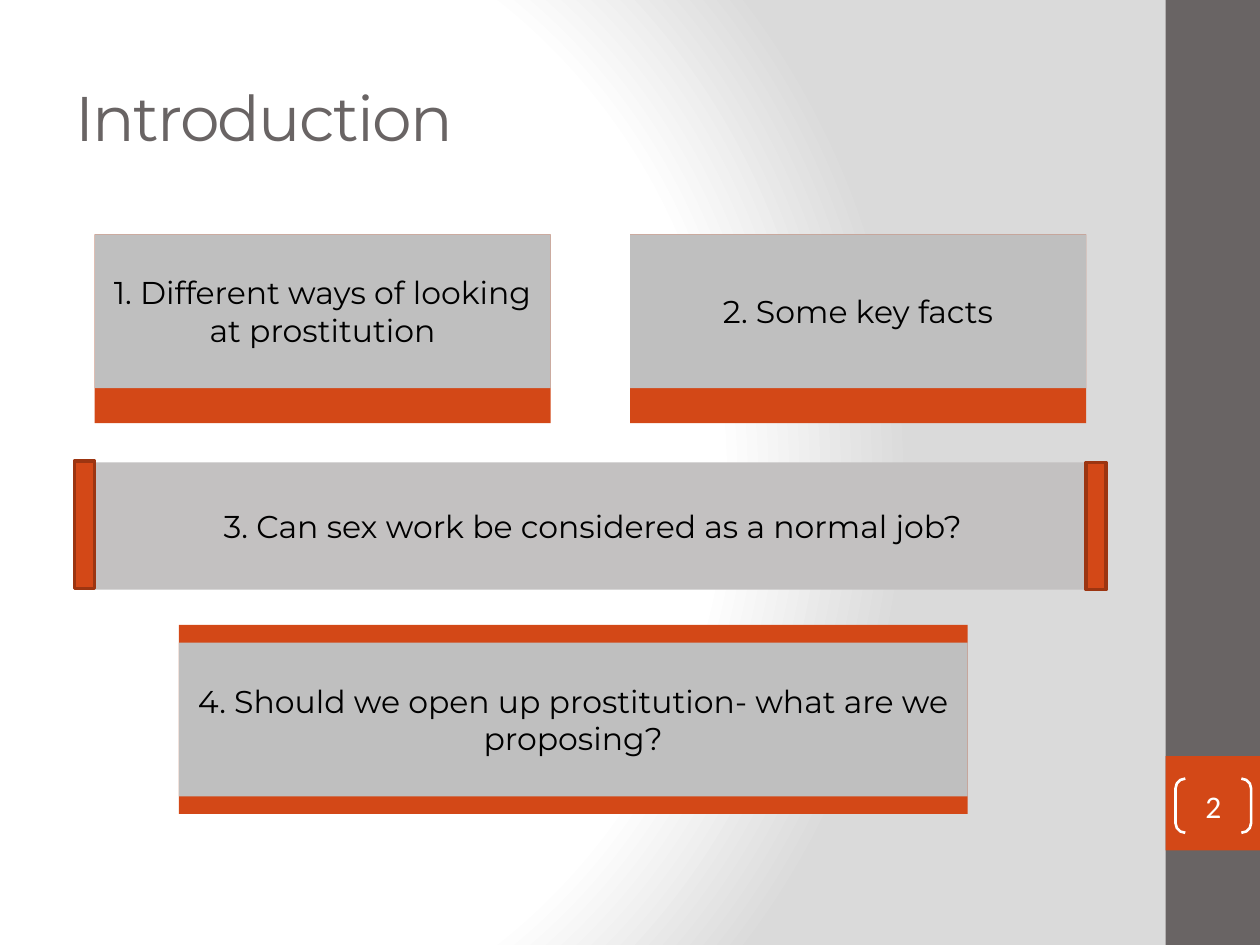
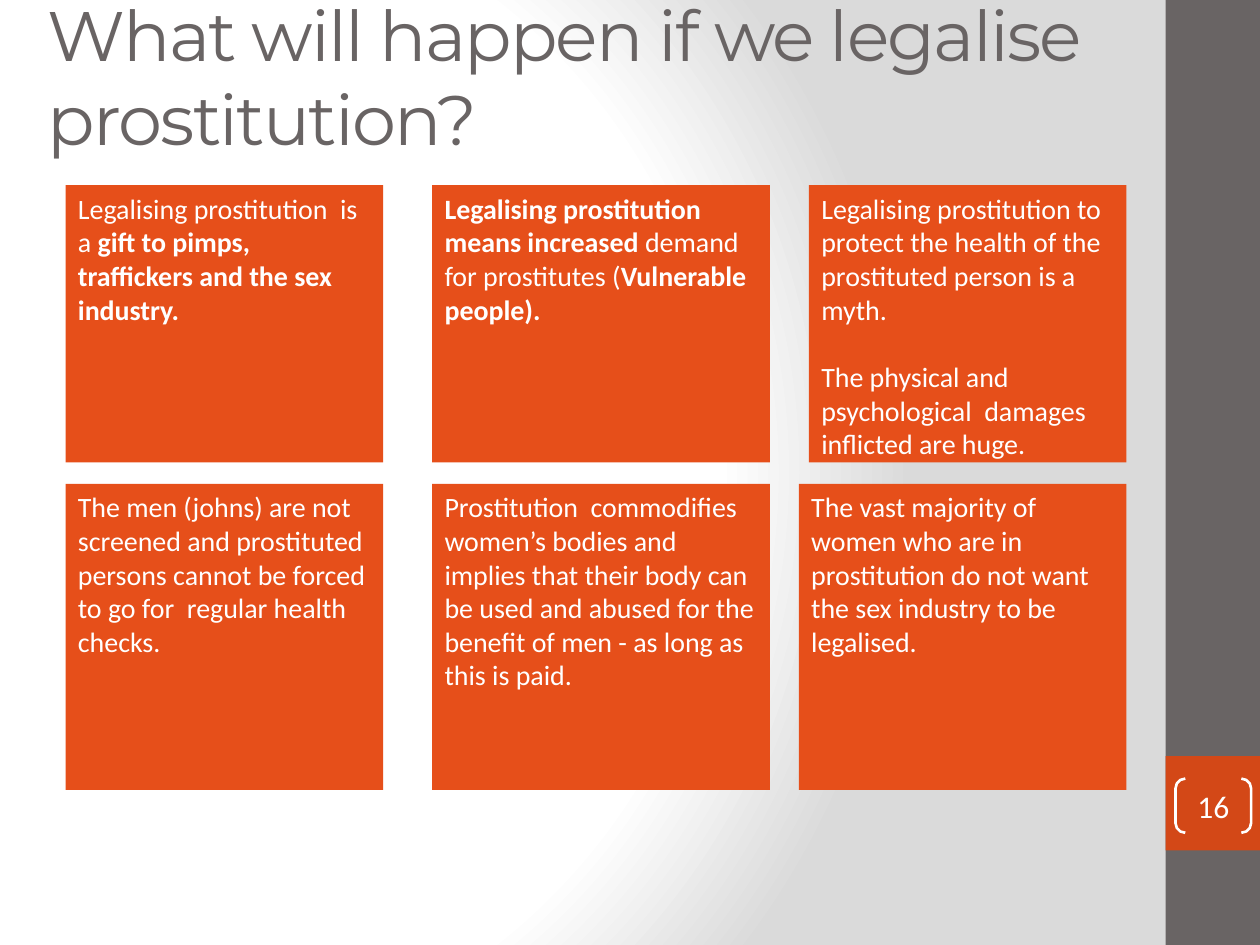
from lxml import etree
from pptx import Presentation
from pptx import util as u
from pptx.dml.color import RGBColor
from pptx.enum import shapes, text
from pptx.oxml import parse_xml
from pptx.oxml.ns import nsdecls, qn

WIDTH, HEIGHT = 10, 7.5
COLORS = {"white": "FFFFFF", "mist": "DADADA", "slate": "696464", "rust": "D34817",
          "rust_edge": "9C3511", "orange": "E64F1A", "plate": "BFBFBF",
          "bar": "C3C1C1", "black": "000000"}
HEADING_FONT, BODY_FONT = "Montserrat", "Calibri"
LEFT, MIDDLE_ALIGN = text.PP_ALIGN.LEFT, text.PP_ALIGN.CENTER
TOP, MIDDLE = text.MSO_ANCHOR.TOP, text.MSO_ANCHOR.MIDDLE

INTRODUCTION = {"title": "Introduction", "number": "2", "size": 36,
                "title_box": (0.5, 0.3, 8.33, 1.25)}
AGENDA_CARDS = [
    ("1. Different ways of looking at prostitution", 0.75, 1.86, 3.62, 0),
    ("2. Some key facts", 5, 1.86, 3.62, 0),
    ("4. Should we open up prostitution- what are we proposing?", 1.42, 4.96, 6.26, 0.14),
]
CARD_HEIGHT, PLATE_HEIGHT = 1.5, 1.22
AGENDA_BAR = ("3. Can sex work be considered as a normal job?", (0.75, 3.67, 7.91, 1.01))
BAR_ENDS = [(0.59, 3.66), (8.62, 3.67)]
BAR_END_SIZE = (0.16, 1.01)

EFFECTS = {"title": "What will happen if we legalise prostitution?", "number": "16",
           "size": 40, "title_box": (0.28, -0.11, 8.66, 1.42)}
EFFECT_COLUMNS = [(0.52, 2.52), (3.43, 2.68), (6.42, 2.52)]
EFFECT_ROWS = [(1.47, 2.2), (3.84, 2.43)]
LAST_CARD_OVERHANG = 0.08
EFFECT_CARDS = [
    [
        [[("Legalising prostitution  is a ", False),
          ("gift to pimps, traffickers and the sex industry.", True)]],
        [[("Legalising prostitution means increased", True),
          (" demand for prostitutes (", False), ("Vulnerable people).", True)]],
        [[("Legalising prostitution to protect the health of the prostituted person "
           "is a myth.", False)],
         [("The physical and psychological  damages inflicted are huge.", False)]],
    ],
    [
        [[("The men (johns) are not screened and prostituted persons cannot be forced "
           "to go for  regular health checks.", False)]],
        [[("Prostitution  commodifies women’s bodies and implies that their body can "
           "be used and abused for the benefit of men - as long as this is paid.", False)]],
        [[("The vast majority of women who are in prostitution do not want the sex "
           "industry to be legalised.", False)]],
    ],
]


def color(name):
    return RGBColor.from_string(COLORS[name])


def inches(box):
    return [u.Inches(length) for length in box]


def add_box(slide, box, fill=None, line=None, line_width=1, kind=shapes.MSO_SHAPE.RECTANGLE):
    shape = slide.shapes.add_shape(kind, *inches(box))
    shape.shadow.inherit = False
    if fill:
        shape.fill.solid()
        shape.fill.fore_color.rgb = color(fill)
    else:
        shape.fill.background()
    if line:
        shape.line.color.rgb = color(line)
        shape.line.width = u.Pt(line_width)
    else:
        shape.line.fill.background()
    return shape


def write(shape, paragraphs, size, font, ink, align=MIDDLE_ALIGN, anchor=MIDDLE, gap=0):
    frame = shape.text_frame
    frame.word_wrap = True
    frame.vertical_anchor = anchor
    for index, pieces in enumerate(paragraphs):
        paragraph = frame.add_paragraph() if index else frame.paragraphs[0]
        paragraph.alignment = align
        paragraph.space_before = u.Pt(gap if index else 0)
        for words, bold in pieces:
            run = paragraph.add_run()
            run.text = words
            run.font.size = u.Pt(size)
            run.font.name = font
            run.font.bold = bold
            run.font.color.rgb = color(ink)


def write_heading(shape, words):
    write(shape, [[(words, False)]], 18, HEADING_FONT, "black")


def set_background(master):
    master.background.fill.gradient()
    gradient = master.element.find(".//" + qn("a:gradFill"))
    stops = "".join(f'<a:gs pos="{position}"><a:srgbClr val="{COLORS[name]}"/></a:gs>'
                    for position, name in [(0, "white"), (75000, "white"), (100000, "mist")])
    gradient.getparent().replace(gradient, parse_xml(
        f'<a:gradFill {nsdecls("a")} rotWithShape="1"><a:gsLst>{stops}</a:gsLst>'
        '<a:path path="circle"><a:fillToRect l="20000" t="50000" r="100000" b="50000"/>'
        '</a:path></a:gradFill>'))


def add_slide(presentation, content):
    slide = presentation.slides.add_slide(presentation.slide_layouts[6])
    band = 0.075 * WIDTH
    add_box(slide, (WIDTH - band, 0, band, HEIGHT), "slate")
    add_box(slide, (WIDTH - band, 0.8 * HEIGHT, band, band), "rust")

    title = slide.shapes.add_textbox(*inches(content["title_box"]))
    write(title, [[(content["title"], False)]], content["size"], HEADING_FONT, "slate", LEFT)
    title.text_frame.paragraphs[0].runs[0].font._element.set("spc", "-100")

    number = add_box(slide, (9.33, 6.18, 0.6, 0.43), line="white", line_width=1.5,
                     kind=shapes.MSO_SHAPE.DOUBLE_BRACKET)
    number.adjustments[0] = 0.18
    frame = number.text_frame
    frame.margin_left = frame.margin_right = frame.margin_top = frame.margin_bottom = 0
    write(number, [[(content["number"], False)]], 18, BODY_FONT, "white")
    return slide


def build_introduction(presentation):
    slide = add_slide(presentation, INTRODUCTION)
    for words, left, top, width, offset in AGENDA_CARDS:
        add_box(slide, (left, top, width, CARD_HEIGHT), "rust")
        plate = add_box(slide, (left, top + offset, width, PLATE_HEIGHT), "plate")
        write_heading(plate, words)
    words, box = AGENDA_BAR
    write_heading(add_box(slide, box, "bar"), words)
    for position in BAR_ENDS:
        add_box(slide, position + BAR_END_SIZE, "rust", "rust_edge", 2)


def build_effects(presentation):
    slide = add_slide(presentation, EFFECTS)
    for (top, height), cards in zip(EFFECT_ROWS, EFFECT_CARDS):
        for (left, width), paragraphs in zip(EFFECT_COLUMNS, cards):
            overhang = LAST_CARD_OVERHANG if paragraphs is EFFECT_CARDS[-1][-1] else 0
            card = add_box(slide, (left - overhang, top, width + overhang, height), "orange")
            write(card, paragraphs, 16, BODY_FONT, "white", LEFT, TOP, gap=19.5)


def main():
    """Build the two slides and save them."""
    presentation = Presentation()
    presentation.slide_width, presentation.slide_height = inches((WIDTH, HEIGHT))
    set_background(presentation.slide_master)
    build_introduction(presentation)
    build_effects(presentation)
    presentation.save("out.pptx")


if __name__ == "__main__":
    main()
